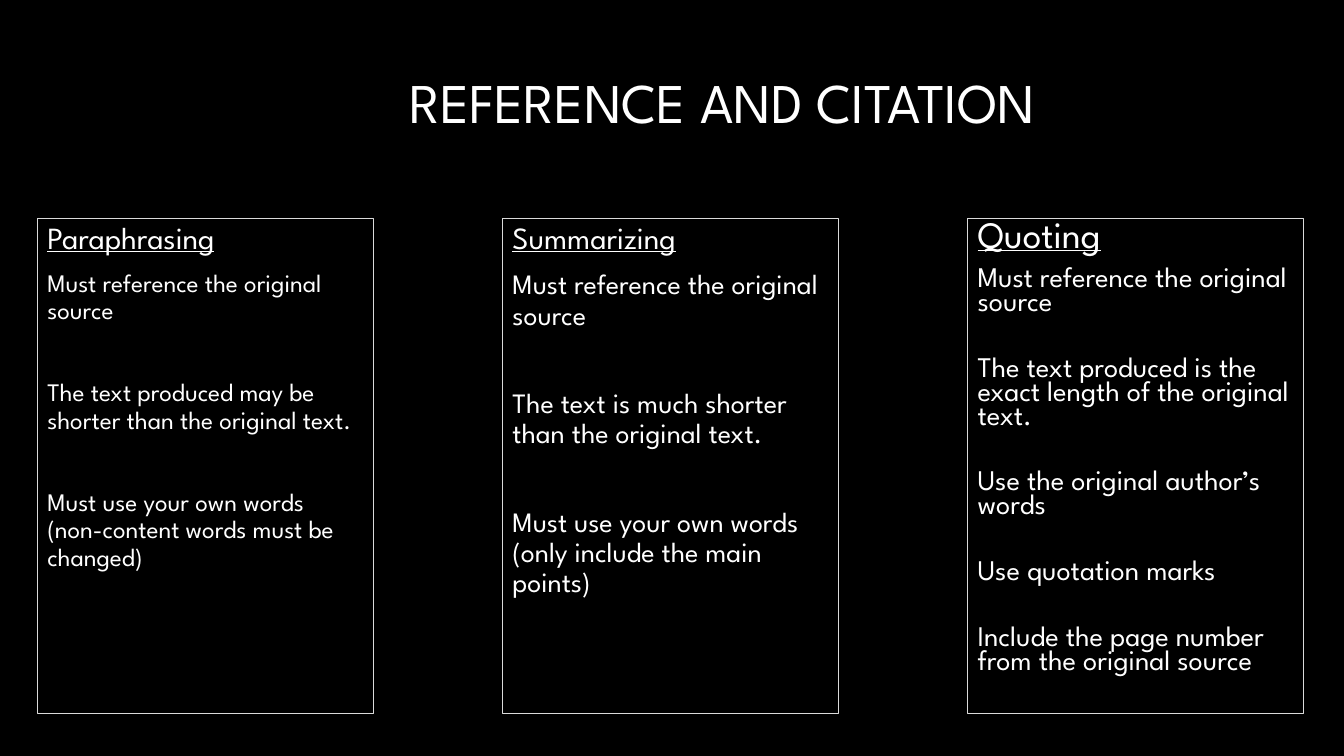
from pptx import Presentation, util as u
from pptx.dml.color import RGBColor
from pptx.enum import shapes, text

COLORS = {"back": "000000", "ink": "FFFFFF", "frame": "DADADA"}
GRID = 36  # columns and rows on the slide


class Deck:
    """Holds the style and the current slide."""
    font = "League Spartan"

    def __init__(self):
        self.prs = Presentation()
        self.prs.slide_width, self.prs.slide_height = u.Inches(13.33), u.Inches(7.5)
        self.s = self.prs.slides.add_slide(self.prs.slide_layouts[6])
        fill = self.s.background.fill
        fill.solid()
        fill.fore_color.rgb = self.color("back")

    def color(self, name):
        return RGBColor.from_string(COLORS[name])

    def box(self, col, row, cols, rows):
        w, h = self.prs.slide_width / GRID, self.prs.slide_height / GRID
        return [round(n) for n in (col * w, row * h, cols * w, rows * h)]

    def add_text(self, p, words, size, underline=False, **paragraph):
        for name, value in paragraph.items():
            setattr(p, name, value)
        r = p.add_run()
        r.text = words
        style = {"name": self.font, "size": u.Pt(size), "underline": underline}
        for name, value in style.items():
            setattr(r.font, name, value)
        r.font.color.rgb = self.color("ink")

    def title(self, words, *cells):
        tf = self.s.shapes.add_textbox(*self.box(*cells)).text_frame
        tf.word_wrap = True
        tf.vertical_anchor = text.MSO_ANCHOR.MIDDLE
        self.add_text(tf.paragraphs[0], words, 40, alignment=text.PP_ALIGN.RIGHT, line_spacing=0.9)

    def card(self, cells, heading, points, head_size, size, spacing, gap):
        sp = self.s.shapes.add_shape(shapes.MSO_SHAPE.RECTANGLE, *self.box(*cells))
        sp.shadow.inherit = False
        sp.fill.background()
        sp.line.color.rgb = self.color("frame")
        sp.line.width = u.Pt(0.75)
        tf = sp.text_frame
        tf.word_wrap = True
        tf.vertical_anchor = text.MSO_ANCHOR.TOP
        common = {"alignment": text.PP_ALIGN.LEFT, "line_spacing": spacing}
        self.add_text(tf.paragraphs[0], heading, head_size, True, space_before=u.Pt(10), **common)
        for i, point in enumerate(points):
            before = u.Pt(gap if i else 10)
            self.add_text(tf.add_paragraph(), point, size, space_before=before, **common)


# Heading, points, heading size, text size, line spacing, gap between points
CARDS = [
    ("Paraphrasing", [
        "Must reference the original source",
        "The text produced may be shorter than the original text.",
        "Must use your own words (non-content words must be changed)",
    ], 22, 18, 0.9, 39.4),
    ("Summarizing", [
        "Must reference the original source",
        "The text is much shorter than the original text.",
        "Must use your own words (only include the main points)",
    ], 22, 20, 0.9, 41.6),
    ("Quoting", [
        "Must reference the original source",
        "The text produced is the exact length of the original text.",
        "Use the original author’s words",
        "Use quotation marks",
        "Include the page number from the original source",
    ], 26.6, 20.3, 0.7, 30),
]


def main():
    deck = Deck()
    # Title
    deck.title("REFERENCE AND CITATION", 1, 2.8, 27, 4.4)
    # Three cards, evenly spaced
    for i, card in enumerate(CARDS):
        deck.card((1 + 12.46 * i, 10.4, 9, 23.6), *card)
    deck.prs.save("out.pptx")


if __name__ == "__main__":
    main()
